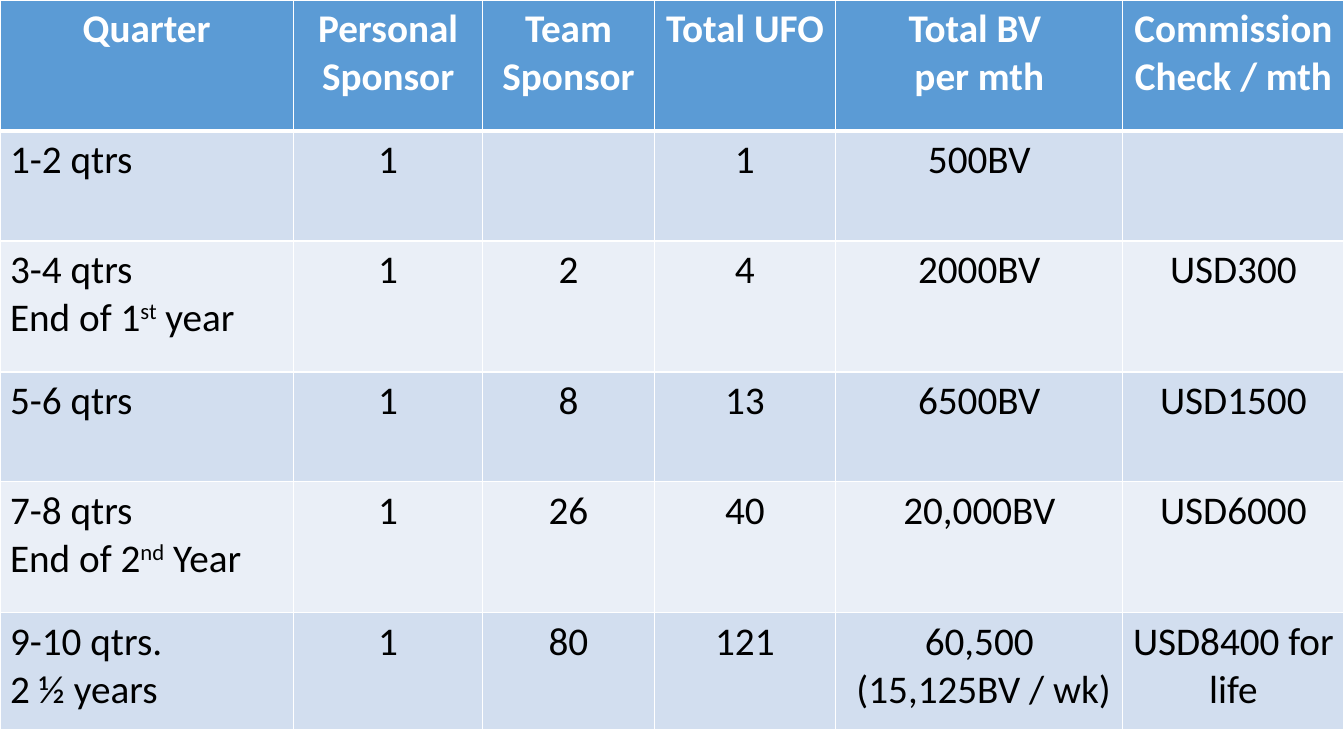
from lxml import etree
from pptx import Presentation
from pptx.dml.color import RGBColor
from pptx.enum.text import PP_ALIGN
from pptx.oxml.ns import qn
from pptx.util import Pt

LEFT, MID = PP_ALIGN.LEFT, PP_ALIGN.CENTER
WHITE, BLACK, BLUE = "FFFFFF", "000000", "5B9BD5"
BANDS = ("D2DEEF", "EAEFF7")
COLS = (209.5, 135.4, 122.4, 129.6, 205.2, 157.9)
ROWS = (93.6, 78.5, 93.6, 78.5, 93.6, 83.5)
DATA = (
    ("Quarter", "Personal Sponsor", "Team Sponsor", "Total UFO",
     "Total BV \nper mth", "Commission Check / mth"),
    ("1-2 qtrs", "1", "", "1", "500BV", ""),
    ("3-4 qtrs\nEnd of 1^st^ year", "1", "2", "4", "2000BV", "USD300"),
    ("5-6 qtrs", "1", "8", "13", "6500BV", "USD1500"),
    ("7-8 qtrs\nEnd of 2^nd^ Year", "1", "26", "40", "20,000BV", "USD6000"),
    ("9-10 qtrs.\n2 ½ years", "1", "80", "121",
     "60,500\n (15,125BV / wk)", "USD8400 for life"),
)


def color(code):
    return RGBColor.from_string(code)


class Deck:
    """Holds the text style and the current slide."""

    def __init__(self, prs):
        self.style = {"name": "Calibri", "size": Pt(28)}
        self.slide = prs.slides.add_slide(prs.slide_layouts[6])

    def text(self, cell, words, align, shade, bold):
        frame = cell.text_frame
        for i, line in enumerate(words.split("\n")):
            para = frame.add_paragraph() if i else frame.paragraphs[0]
            para.alignment = align
            for j, part in enumerate(line.split("^")):
                if not part:
                    continue
                run = para.add_run()
                run.text = part
                for key, value in {**self.style, "bold": bold}.items():
                    setattr(run.font, key, value)
                run.font.color.rgb = color(shade)
                if j % 2:
                    run.font._element.set("baseline", "30000")

    def edges(self, cell, widths):
        props = cell._tc.get_or_add_tcPr()
        for side, width in widths.items():
            line = etree.SubElement(props, qn("a:ln" + side), w=str(Pt(width)))
            fill = etree.SubElement(line, qn("a:solidFill"))
            etree.SubElement(fill, qn("a:srgbClr"), val=WHITE)

    def table(self, data, cols, rows):
        frame = self.slide.shapes.add_table(
            len(rows), len(cols), 0, 0, Pt(sum(cols)), Pt(sum(rows)))
        grid = frame.table
        for key in ("first_row", "horz_banding"):
            setattr(grid, key, False)
        for col, width in zip(grid.columns, cols):
            col.width = Pt(width)
        for r, (row, height) in enumerate(zip(grid.rows, rows)):
            row.height = Pt(height)
            head = r == 0
            for c, cell in enumerate(row.cells):
                self.edges(cell, {"L": 1, "R": 1, "T": 3 if r == 1 else 1,
                                  "B": 3 if head else 1})
                cell.fill.solid()
                cell.fill.fore_color.rgb = color(BLUE if head else BANDS[(r - 1) % 2])
                self.text(cell, data[r][c], MID if head or c else LEFT,
                          WHITE if head else BLACK, head)


def main():
    prs = Presentation()
    prs.slide_width, prs.slide_height = Pt(960), Pt(540)
    Deck(prs).table(DATA, COLS, ROWS)
    prs.save("out.pptx")


if __name__ == "__main__":
    main()
